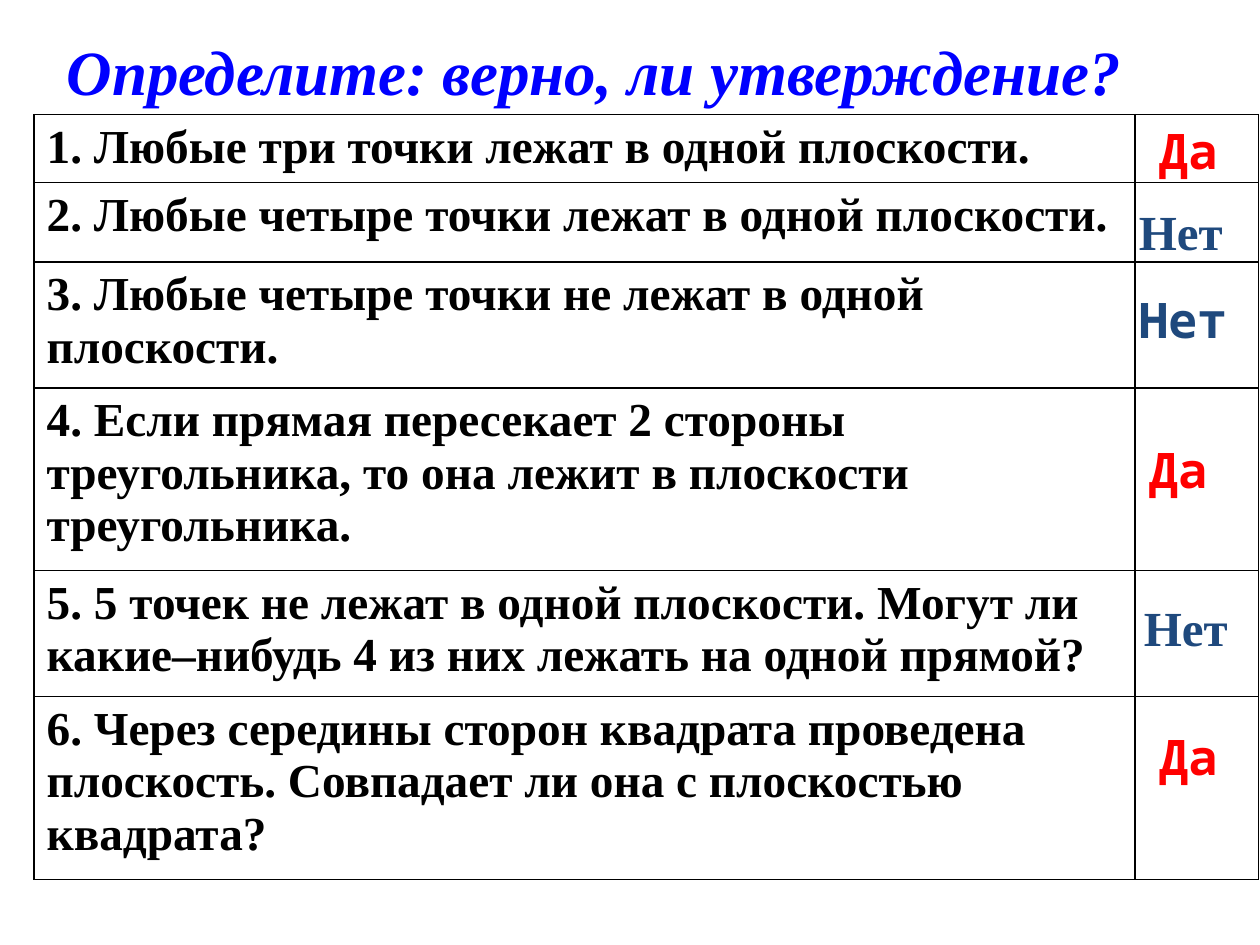
import pptx
import pptx.dml.color
import pptx.enum.text
import pptx.util
from lxml import etree
from pptx.oxml.ns import qn

Inches = pptx.util.Inches
SERIF, MONO = "Times New Roman", "Noto Sans Mono"
RED, NAVY, BLUE, BLACK = "FF0000", "1F497D", "0000FF", "000000"

TITLE = "Определите: верно, ли утверждение?"
COLS = (8.74, 0.98)
# statement, row height
ROWS = [
    ("1. Любые три точки лежат в одной плоскости.", 0.54),
    ("2. Любые четыре точки лежат в одной плоскости.", 0.63),
    ("3. Любые четыре точки не лежат в одной плоскости.", 1),
    ("4. Если прямая пересекает 2 стороны треугольника, "
     "то она лежит в плоскости треугольника.", 1.45),
    ("5. 5 точек не лежат в одной плоскости. Могут ли "
     "какие–нибудь 4 из них лежать на одной прямой?", 1),
    ("6. Через середины сторон квадрата проведена плоскость. "
     "Совпадает ли она с плоскостью квадрата?", 1.45),
]
# answer, font, colour, left, top, width
ANSWERS = [
    ("Да", MONO, RED, 9.1, 0.91, 0.7),
    ("Нет", SERIF, NAVY, 8.94, 1.55, 1.06),
    ("Нет", MONO, NAVY, 8.94, 2.25, 1.06),
    ("Да", MONO, RED, 9.02, 3.44, 0.79),
    ("Нет", SERIF, NAVY, 8.98, 4.69, 1.02),
    ("Да", MONO, RED, 9.1, 5.72, 0.71),
]


def color(code):
    return pptx.dml.color.RGBColor.from_string(code)


def write(frame, text, size, face, code, **more):
    frame.word_wrap = True
    run = frame.paragraphs[0].add_run()
    run.text = text
    style = dict(size=pptx.util.Pt(size), name=face, bold=True, **more)
    for key, value in style.items():
        setattr(run.font, key, value)
    run.font.color.rgb = color(code)


def label(slide, box, *style, **more):
    shape = slide.shapes.add_textbox(*map(Inches, box))
    write(shape.text_frame, *style, **more)
    shape.text_frame.auto_size = pptx.enum.text.MSO_AUTO_SIZE.SHAPE_TO_FIT_TEXT


def border(cell):
    props = cell._tc.get_or_add_tcPr()
    for side in ("a:lnL", "a:lnR", "a:lnT", "a:lnB"):
        line = etree.SubElement(props, qn(side), w="12700")
        fill = etree.SubElement(line, qn("a:solidFill"))
        etree.SubElement(fill, qn("a:srgbClr"), val=BLACK)


def grid(slide):
    high = sum(row[1] for row in ROWS)
    box = (0.27, 0.91, sum(COLS), high)
    table = slide.shapes.add_table(len(ROWS), len(COLS), *map(Inches, box)).table
    table.first_row = table.horz_banding = False
    for col, width in zip(table.columns, COLS):
        col.width = Inches(width)
    for row, (text, height) in zip(table.rows, ROWS):
        row.height = Inches(height)
        for cell in row.cells:
            border(cell)
            cell.fill.background()
        write(row.cells[0].text_frame, text, 27, SERIF, BLACK)


def main():
    deck = pptx.Presentation()
    deck.slide_width, deck.slide_height = Inches(10), Inches(7.5)
    slide = deck.slides.add_slide(deck.slide_layouts[6])
    grid(slide)
    for text, face, code, left, top, width in ANSWERS:
        label(slide, (left, top, width, 0.57), text, 28, face, code)
    label(slide, (0.43, 0.21, 9.57, 0.7), TITLE, 36, SERIF, BLUE, italic=True)
    deck.save("out.pptx")


if __name__ == "__main__":
    main()
